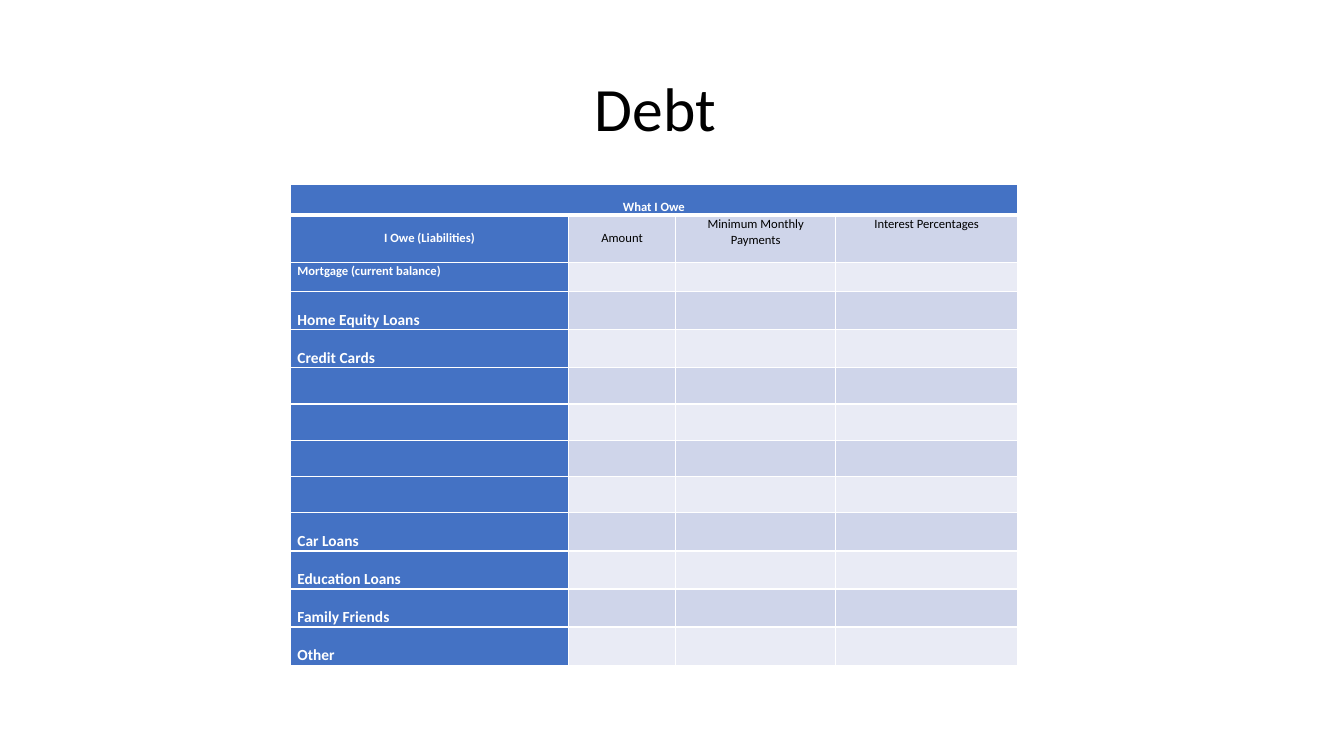
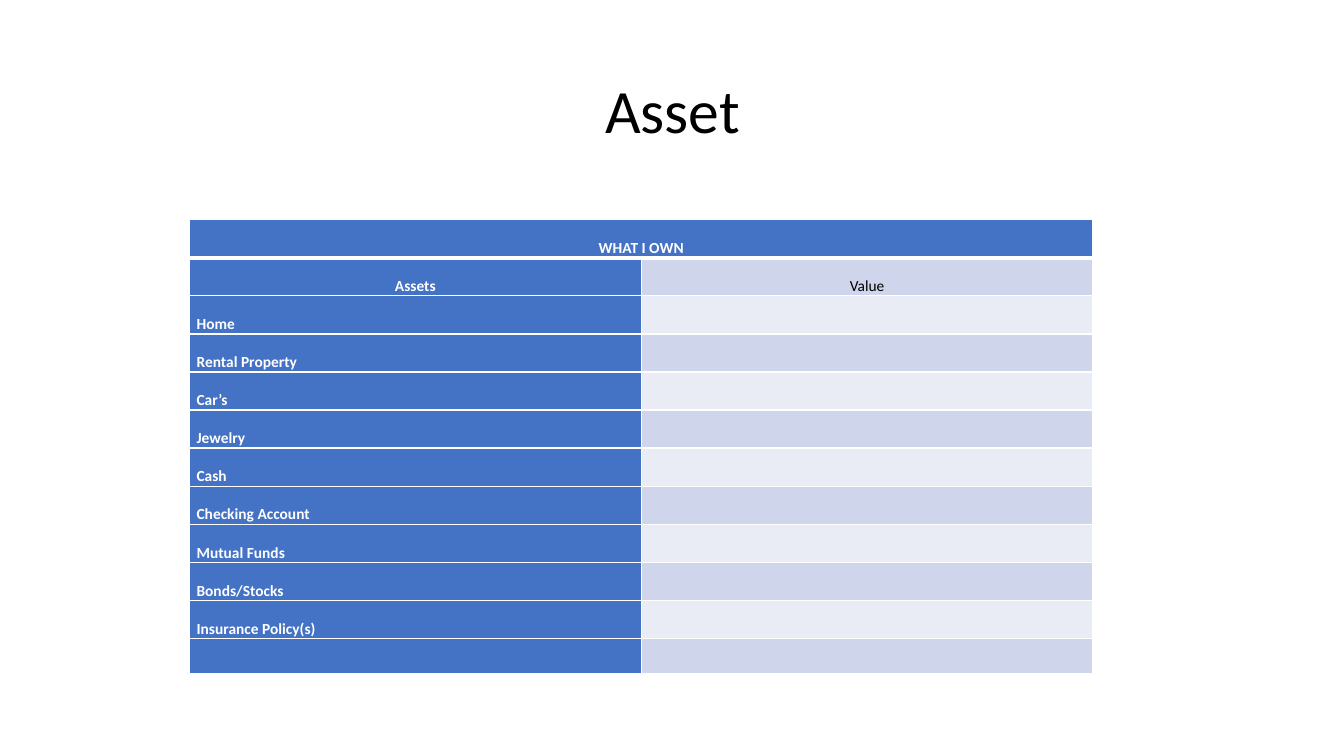
from dataclasses import dataclass

from lxml import etree
from pptx import Presentation
from pptx.dml.color import RGBColor
from pptx.enum.text import MSO_ANCHOR, PP_ALIGN
from pptx.oxml.ns import qn
from pptx.util import Inches, Pt

CENTER = PP_ALIGN.CENTER
LEFT = PP_ALIGN.LEFT
MIDDLE = MSO_ANCHOR.MIDDLE
TITLE_ONLY = 5


@dataclass(frozen=True)
class Theme:
    font: str = "Calibri"
    accent: str = "4472C4"
    band_dark: str = "CFD5EA"
    band_light: str = "E9EBF5"
    white: str = "FFFFFF"
    black: str = "000000"
    title_size: int = 44
    body_size: int = 11
    small_size: int = 9
    thin_rule: int = 1
    thick_rule: int = 3


THEME = Theme()


@dataclass(frozen=True)
class RowStyle:
    height: float
    size: int = THEME.body_size
    spacing: float = 2


@dataclass(frozen=True)
class Worksheet:
    title: str
    title_left: float
    title_top: float
    left: float
    top: float
    widths: tuple[float, ...]
    caption: str
    headings: tuple[str, ...]
    labels: tuple[str, ...]
    row_styles: tuple[RowStyle, ...]
    tight_headings: tuple[str, ...] = ()


TIGHT_SPACING = 1.07

WORKSHEETS = (
    Worksheet(
        title="Debt",
        title_left=0.75,
        title_top=0.38,
        left=2.88,
        top=1.83,
        widths=(2.76, 1.06, 1.59, 1.8),
        caption="What I Owe",
        headings=("I Owe (Liabilities)", "Amount", "Minimum Monthly Payments", "Interest Percentages"),
        labels=(
            "Mortgage (current balance)", "Home Equity Loans", "Credit Cards", "", "", "", "",
            "Car Loans", "Education Loans", "Family Friends", "Other",
        ),
        row_styles=(
            RowStyle(0.29, THEME.small_size),
            RowStyle(0.47, THEME.small_size),
            RowStyle(0.29, THEME.small_size, TIGHT_SPACING),
            *[RowStyle(0.36)] * 10,
        ),
        tight_headings=("Minimum Monthly Payments", "Interest Percentages"),
    ),
    Worksheet(
        title="Asset",
        title_left=0.92,
        title_top=0.4,
        left=1.88,
        top=2.18,
        widths=(4.48, 4.48),
        caption="WHAT I OWN",
        headings=("Assets", "Value"),
        labels=(
            "Home", "Rental Property", "Car’s", "Jewelry", "Cash", "Checking Account",
            "Mutual Funds", "Bonds/Stocks", "Insurance Policy(s)", "",
        ),
        row_styles=(RowStyle(0.35),) * 12,
    ),
)


def format_paragraph(para, size: int, color: str, bold: bool, align, spacing: float) -> None:
    para.alignment = align
    para.line_spacing = spacing
    for span in para.runs:
        span.font.name = THEME.font
        span.font.size = Pt(size)
        span.font.bold = bold
        span.font.color.rgb = RGBColor.from_string(color)
    if not para.runs:
        etree.SubElement(para._p, qn("a:endParaRPr"), sz=str(size * 100))


def add_borders(cell, row: int) -> None:
    properties = cell._tc.get_or_add_tcPr()
    for side in "LRTB":
        thick = (row, side) in ((0, "B"), (1, "T"))
        points = THEME.thick_rule if thick else THEME.thin_rule
        line = etree.SubElement(properties, qn(f"a:ln{side}"), w=str(Pt(points)))
        fill = etree.SubElement(line, qn("a:solidFill"))
        etree.SubElement(fill, qn("a:srgbClr"), val=THEME.white)


def style_cell(cell, text: str, row: int, column: int, style: RowStyle, spacing: float) -> None:
    accented = row == 0 or column == 0
    band = THEME.band_dark if row % 2 else THEME.band_light
    add_borders(cell, row)
    cell.fill.solid()
    cell.fill.fore_color.rgb = RGBColor.from_string(THEME.accent if accented else band)
    cell.margin_left = cell.margin_right = Inches(0.07)
    cell.margin_top = cell.margin_bottom = Inches(0)
    if text:
        cell.text_frame.text = text
    format_paragraph(
        cell.text_frame.paragraphs[0],
        style.size,
        THEME.white if accented else THEME.black,
        accented,
        CENTER if row < 2 else LEFT,
        spacing,
    )


def add_title(page, sheet: Worksheet) -> None:
    box = page.shapes.title
    box.left, box.top = Inches(sheet.title_left), Inches(sheet.title_top)
    box.width, box.height = Inches(11.5), Inches(1.45)
    box.text_frame.text = sheet.title
    box.text_frame.vertical_anchor = MIDDLE
    format_paragraph(box.text_frame.paragraphs[0], THEME.title_size, THEME.black, False, CENTER, 0.9)


def add_worksheet_table(page, sheet: Worksheet) -> None:
    blanks = ("",) * (len(sheet.widths) - 1)
    rows = [(sheet.caption, *blanks), sheet.headings, *[(label, *blanks) for label in sheet.labels]]
    frame = page.shapes.add_table(
        len(rows),
        len(sheet.widths),
        Inches(sheet.left),
        Inches(sheet.top),
        Inches(sum(sheet.widths)),
        Inches(sum(style.height for style in sheet.row_styles)),
    )
    table = frame.table
    table.first_row = table.horz_banding = False
    for column, width in zip(table.columns, sheet.widths):
        column.width = Inches(width)
    for row, (texts, style) in enumerate(zip(rows, sheet.row_styles)):
        table.rows[row].height = Inches(style.height)
        for column, text in enumerate(texts):
            spacing = TIGHT_SPACING if text in sheet.tight_headings else style.spacing
            style_cell(table.cell(row, column), text, row, column, style, spacing)
    table.cell(0, 0).merge(table.cell(0, len(sheet.widths) - 1))


def main() -> None:
    deck = Presentation()
    deck.slide_width, deck.slide_height = Inches(13.33), Inches(7.5)
    for sheet in WORKSHEETS:
        page = deck.slides.add_slide(deck.slide_layouts[TITLE_ONLY])
        add_title(page, sheet)
        add_worksheet_table(page, sheet)
    deck.save("out.pptx")


if __name__ == "__main__":
    main()
